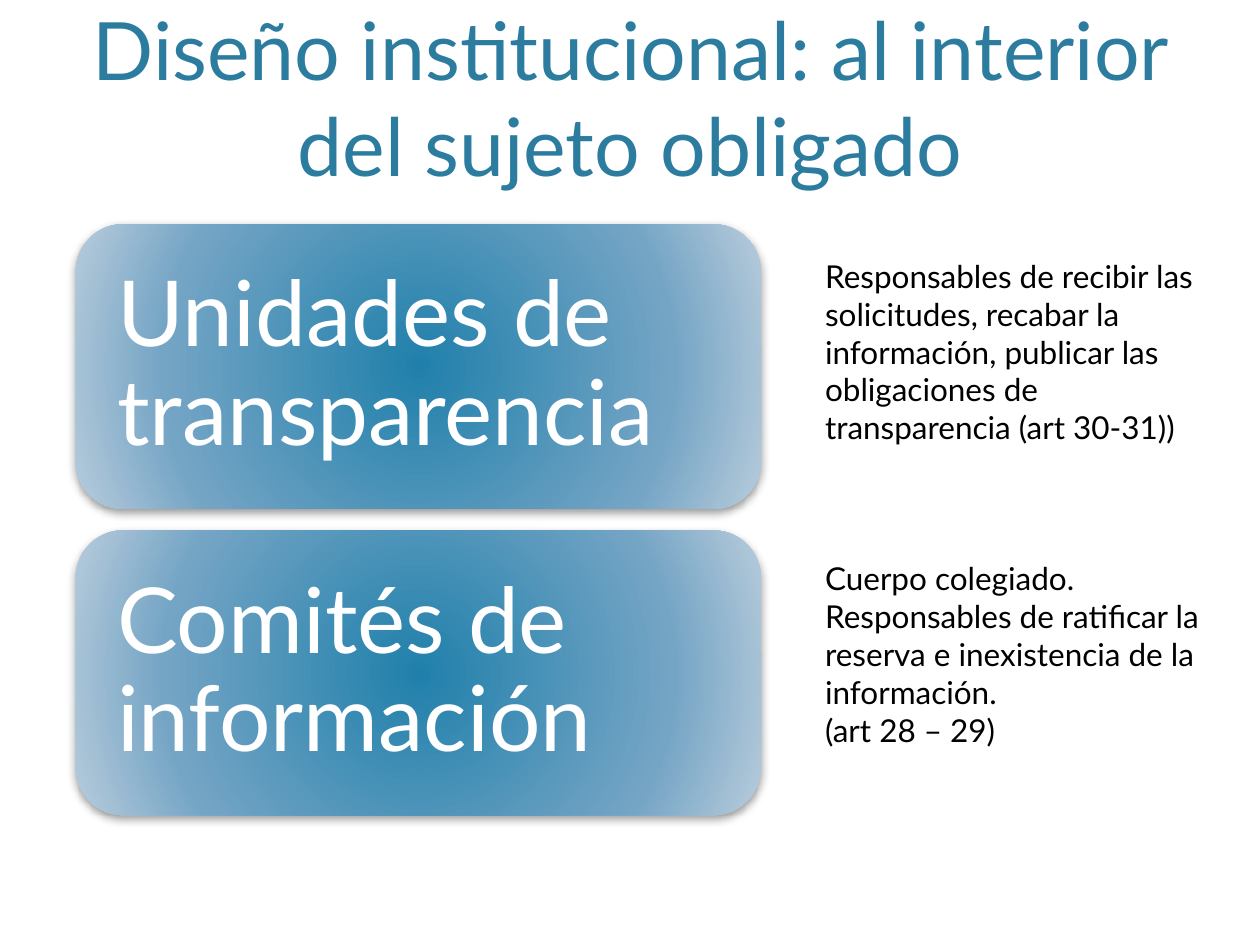
from lxml import etree
from pptx import Presentation
from pptx.dml.color import RGBColor
from pptx.enum.shapes import MSO_SHAPE
from pptx.enum.text import MSO_ANCHOR, PP_ALIGN
from pptx.oxml import parse_xml
from pptx.oxml.ns import nsdecls, qn
from pptx.util import Inches, Pt

ROUNDED = MSO_SHAPE.ROUNDED_RECTANGLE
MIDDLE, BOTTOM, TOP = MSO_ANCHOR.MIDDLE, MSO_ANCHOR.BOTTOM, MSO_ANCHOR.TOP
LEFT, CENTER = PP_ALIGN.LEFT, PP_ALIGN.CENTER

TITLE_BLUE = RGBColor(0x2C, 0x7C, 0x9F)
DEEP_BLUE = RGBColor(0x20, 0x80, 0xAB)
MID_BLUE = RGBColor(0x75, 0xA5, 0xC5)
PALE_BLUE = RGBColor(0xB8, 0xCC, 0xDC)
WHITE = RGBColor(0xFF, 0xFF, 0xFF)
BLACK = RGBColor(0x00, 0x00, 0x00)
GRADIENT = [(0, DEEP_BLUE), (69, MID_BLUE), (100, PALE_BLUE)]
FONT = "Lato"

BODIES = [
    (
        "Unidades de transparencia",
        [
            "Responsables de recibir las solicitudes, recabar la información, "
            "publicar las obligaciones de transparencia (art 30-31))"
        ],
        1.99,
    ),
    (
        "Comités de información",
        [
            "Cuerpo colegiado.",
            "Responsables de ratificar la reserva e inexistencia de la información.",
            "(art 28 – 29)",
        ],
        4.39,
    ),
]


def write_text(shape, lines, size, color, anchor, alignment=LEFT, spacing=None):
    """Write one paragraph per line with a shared style."""
    frame = shape.text_frame
    frame.word_wrap = True
    frame.vertical_anchor = anchor
    frame.text = "\n".join(lines)
    for paragraph in frame.paragraphs:
        paragraph.alignment = alignment
        paragraph.line_spacing = spacing
        paragraph.font.name = FONT
        paragraph.font.size = Pt(size)
        paragraph.font.color.rgb = color


def apply_radial_fill(shape):
    """Fill the shape with the circular blue gradient."""
    shape.fill.background()
    stops = "".join(
        f'<a:gs pos="{position * 1000}"><a:srgbClr val="{color}"/></a:gs>'
        for position, color in GRADIENT
    )
    gradient = parse_xml(
        f'<a:gradFill {nsdecls("a")} rotWithShape="1"><a:gsLst>{stops}</a:gsLst>'
        '<a:path path="circle"><a:fillToRect l="100000" t="100000" '
        'r="100000" b="100000"/></a:path></a:gradFill>'
    )
    properties = shape.element.spPr
    properties.replace(properties.find(qn("a:noFill")), gradient)


def apply_soft_shadow(shape):
    """Give the shape a soft shadow that falls downwards."""
    shape.shadow.inherit = False
    effects = shape.element.spPr.find(qn("a:effectLst"))
    shadow = etree.SubElement(
        effects, qn("a:outerShdw"), blurRad=str(Pt(5)), dist=str(Pt(2)),
        dir="5400000", rotWithShape="0",
    )
    color = etree.SubElement(shadow, qn("a:srgbClr"), val=str(BLACK))
    etree.SubElement(color, qn("a:alpha"), val="40000")


def add_title(slide, box, text):
    """Place the centred title in its box."""
    write_text(slide.shapes.add_textbox(*box), [text], 46, TITLE_BLUE, BOTTOM, CENTER)


def add_card(slide, box, name):
    """Place a rounded card that carries the name of a body."""
    card = slide.shapes.add_shape(ROUNDED, *box)
    apply_radial_fill(card)
    card.line.fill.background()
    apply_soft_shadow(card)
    frame = card.text_frame
    frame.margin_left = frame.margin_right = Inches(0.22)
    frame.margin_top = frame.margin_bottom = Inches(0.22)
    write_text(card, [name], 52, WHITE, MIDDLE, spacing=0.9)


def add_duties(slide, box, lines):
    """Place the description of a body's duties."""
    write_text(slide.shapes.add_textbox(*box), lines, 18, BLACK, TOP)


def main():
    """Build the slide and save it."""
    presentation = Presentation()
    presentation.slide_width, presentation.slide_height = Inches(10), Inches(7.5)
    slide = presentation.slides.add_slide(presentation.slide_layouts[6])
    add_title(
        slide,
        (Inches(0.6), Inches(0.12), Inches(8.8), Inches(1.46)),
        "Diseño institucional: al interior del sujeto obligado",
    )
    card_height, card_pitch = Inches(2.26), Inches(2.43)
    for index, (name, duties, duties_top) in enumerate(BODIES):
        card_top = Inches(1.78) + index * card_pitch
        add_card(slide, (Inches(0.6), card_top, Inches(5.44), card_height), name)
        add_duties(
            slide,
            (Inches(6.45), Inches(duties_top), Inches(3.34), Inches(1.62)),
            duties,
        )
    presentation.save("out.pptx")


if __name__ == "__main__":
    main()
